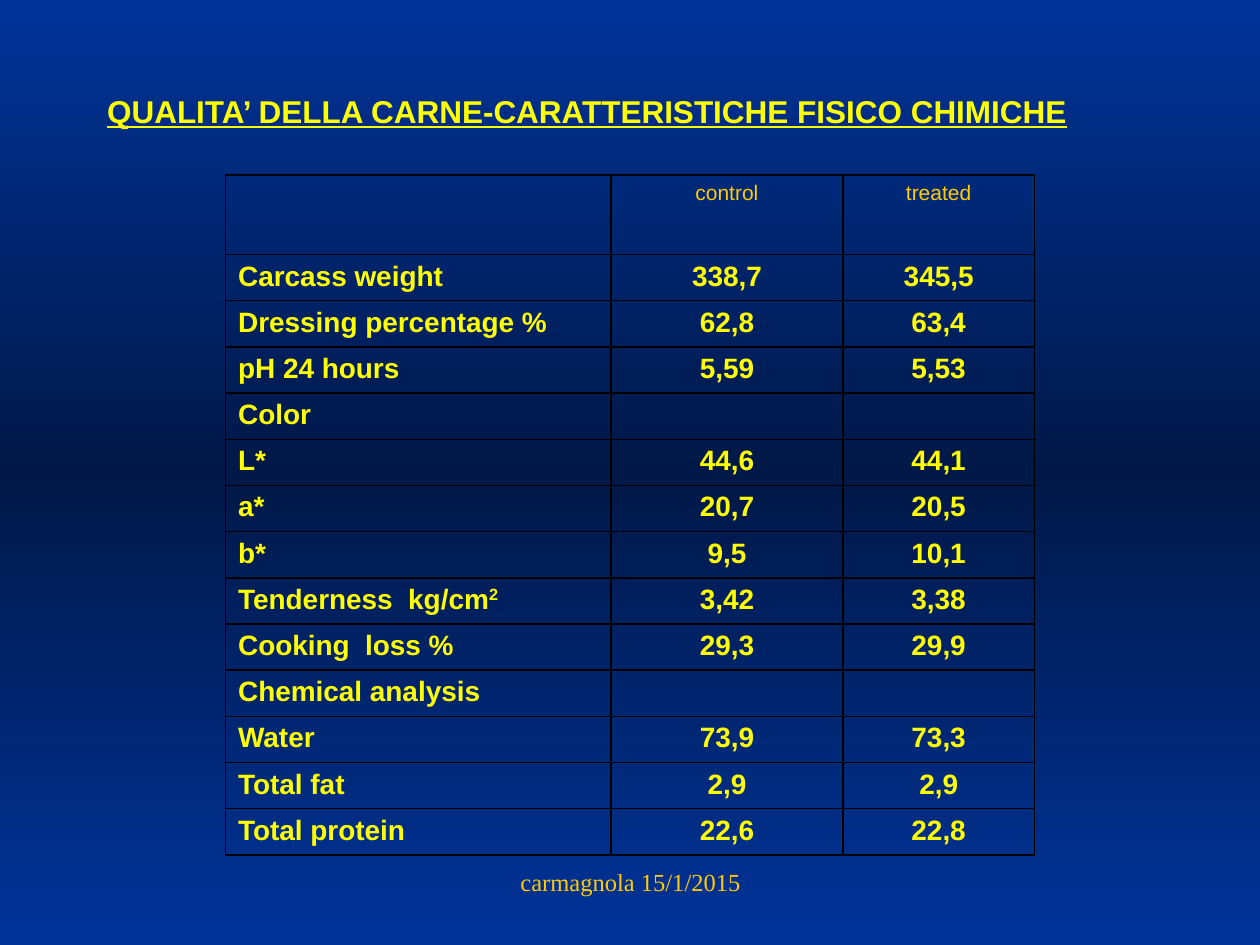
from copy import deepcopy
from typing import NamedTuple

from lxml import etree
from pptx import Presentation
from pptx.dml.color import RGBColor
from pptx.enum.text import MSO_ANCHOR, PP_ALIGN
from pptx.oxml.ns import qn
from pptx.util import Inches, Pt

BLUE = RGBColor(0x00, 0x33, 0x99)
NAVY = RGBColor(0x00, 0x18, 0x47)
YELLOW = RGBColor(0xFF, 0xFF, 0x00)
GOLD = RGBColor(0xFF, 0xCC, 0x00)
BLACK = RGBColor(0x00, 0x00, 0x00)
LEFT, CENTER, JUSTIFY = PP_ALIGN.LEFT, PP_ALIGN.CENTER, PP_ALIGN.JUSTIFY
TOP = MSO_ANCHOR.TOP


class Style(NamedTuple):
    size: int
    color: RGBColor
    bold: bool = False
    name: str = "Arial"
    underline: bool = False


class Measure(NamedTuple):
    label: str
    control: str = ""
    treated: str = ""
    superscript: str = ""


TITLE = Style(18, YELLOW, bold=True, underline=True)
HEADER = Style(12, GOLD)
BODY = Style(16, YELLOW, bold=True)
FOOTER = Style(14, GOLD, name="Times New Roman")

ROWS = [
    Measure("", "control", "treated"),
    Measure("Carcass weight", "338,7", "345,5"),
    Measure("Dressing percentage %", "62,8", "63,4"),
    Measure("pH 24 hours", "5,59", "5,53"),
    Measure("Color"),
    Measure("L*", "44,6", "44,1"),
    Measure("a*", "20,7", "20,5"),
    Measure("b*", "9,5", "10,1"),
    Measure("Tenderness  kg/cm", "3,42", "3,38", superscript="2"),
    Measure("Cooking  loss %", "29,3", "29,9"),
    Measure("Chemical analysis"),
    Measure("Water", "73,9", "73,3"),
    Measure("Total fat", "2,9", "2,9"),
    Measure("Total protein", "22,6", "22,8"),
]
COLUMN_WIDTHS = [3.06, 1.84, 1.52]
TABLE_HEIGHT, HEADER_HEIGHT = 5.4, 0.63


def write(tf, text: str, style: Style, align, superscript: str = "") -> None:
    p = tf.paragraphs[0]
    p.alignment = align
    p.font.size = Pt(style.size)
    p.font.name = style.name
    p.font.bold = style.bold
    p.font.underline = style.underline
    p.font.color.rgb = style.color
    if text:
        p.add_run().text = text
    else:
        # An empty cell takes its line height from the end mark
        p._p.get_or_add_endParaRPr().set("sz", str(style.size * 100))
    if superscript:
        r = p.add_run()
        r.text = superscript
        r.font._element.set("baseline", "30000")


def add_borders(cell) -> None:
    tc_pr = cell._tc.get_or_add_tcPr()
    for side in ("lnL", "lnR", "lnT", "lnB"):
        ln = etree.SubElement(tc_pr, qn(f"a:{side}"), w=str(Pt(1)))
        fill = etree.SubElement(ln, qn("a:solidFill"))
        etree.SubElement(fill, qn("a:srgbClr"), val=str(BLACK))


def paint_background(s) -> None:
    fill = s.background.fill
    fill.gradient()
    fill.gradient_angle = 270
    stops = s._element.find(".//" + qn("a:gsLst"))
    stops.append(deepcopy(stops[0]))
    for stop, position, color in zip(fill.gradient_stops, (0, 0.5, 1), (BLUE, NAVY, BLUE)):
        stop.position = position
        stop.color.rgb = color


def add_measures(s) -> None:
    frame = s.shapes.add_table(
        len(ROWS), len(COLUMN_WIDTHS), Inches(1.79), Inches(1.39),
        Inches(sum(COLUMN_WIDTHS)), Inches(TABLE_HEIGHT))
    table = frame.table
    table.first_row = table.horz_banding = False
    for column, width in zip(table.columns, COLUMN_WIDTHS):
        column.width = Inches(width)
    row_height = (TABLE_HEIGHT - HEADER_HEIGHT) / (len(ROWS) - 1)
    for i, measure in enumerate(ROWS):
        table.rows[i].height = Inches(row_height if i else HEADER_HEIGHT)
        style = BODY if i else HEADER
        for j, text in enumerate((measure.label, measure.control, measure.treated)):
            cell = table.cell(i, j)
            add_borders(cell)
            cell.fill.background()
            write(cell.text_frame, text, style, CENTER if j else JUSTIFY,
                  "" if j else measure.superscript)


def main() -> None:
    prs = Presentation()
    prs.slide_width, prs.slide_height = Inches(10), Inches(7.5)
    s = prs.slides.add_slide(prs.slide_layouts[5])
    paint_background(s)

    title = s.shapes.title
    title.left, title.top = Inches(0.75), Inches(0.68)
    title.width, title.height = Inches(7.9), Inches(0.61)
    title.text_frame.vertical_anchor = TOP
    write(title.text_frame, "QUALITA’ DELLA CARNE-CARATTERISTICHE FISICO CHIMICHE", TITLE, LEFT)

    add_measures(s)

    footer = s.shapes.add_textbox(Inches(3.42), Inches(6.83), Inches(3.17), Inches(0.5))
    footer.text_frame.word_wrap = True
    write(footer.text_frame, "carmagnola 15/1/2015", FOOTER, CENTER)

    prs.save("out.pptx")


if __name__ == "__main__":
    main()
